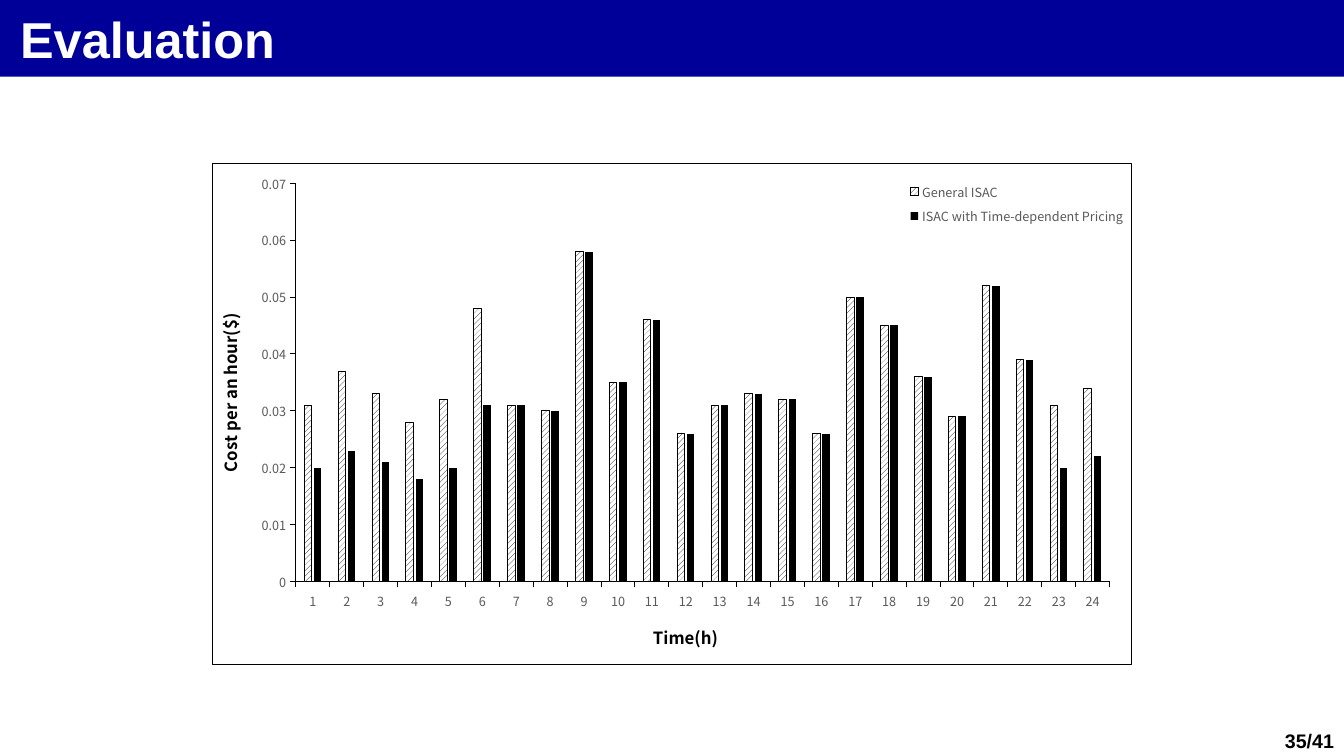
from dataclasses import dataclass

from lxml import etree
from pptx import Presentation
from pptx.chart import data as cd
from pptx.dml.color import RGBColor
from pptx.enum import chart as ch, dml, text
from pptx.oxml import parse_xml
from pptx.oxml.ns import nsdecls, qn
from pptx.util import Inches, Pt


@dataclass(frozen=True)
class Theme:
    navy: RGBColor = RGBColor(0x00, 0x00, 0x99)
    white: RGBColor = RGBColor(0xFF, 0xFF, 0xFF)
    black: RGBColor = RGBColor(0x00, 0x00, 0x00)
    gray: RGBColor = RGBColor(0x59, 0x59, 0x59)
    sans: str = "Arial"
    plot: str = "Noto Sans CJK KR"
    head: float = 36
    page: float = 14
    name: float = 12
    base: float = 10
    tick: float = 9
    line: float = 0.75


@dataclass(frozen=True)
class Series:
    name: str
    costs: tuple[float, ...]
    hatched: bool


@dataclass(frozen=True)
class Place:
    """Position inside the chart, as fractions of its size."""
    x: float
    y: float
    w: float = 0
    h: float = 0
    inner: bool = False


@dataclass(frozen=True)
class Label:
    """Axis title, turned by whole degrees."""
    name: str
    spot: Place
    turn: int


T = Theme()
HOURS = range(1, 25)
SERIES = (
    Series("General ISAC", (
        0.031, 0.037, 0.033, 0.028, 0.032, 0.048, 0.031, 0.03,
        0.058, 0.035, 0.046, 0.026, 0.031, 0.033, 0.032, 0.026,
        0.05, 0.045, 0.036, 0.029, 0.052, 0.039, 0.031, 0.034), True),
    Series("ISAC with Time-dependent Pricing", (
        0.02, 0.023, 0.021, 0.018, 0.02, 0.031, 0.031, 0.03,
        0.058, 0.035, 0.046, 0.026, 0.031, 0.033, 0.032, 0.026,
        0.05, 0.045, 0.036, 0.029, 0.052, 0.039, 0.02, 0.022), False),
)
LABELS = (
    Label("Time(h)", Place(0.476, 0.91), 0),
    Label("Cost per an hour($)", Place(0, 0.293), -90),
)


def style(font, size: float, color: RGBColor, face: str, bold: bool = False) -> None:
    font.size, font.name, font.bold = Pt(size), face, bold
    font.color.rgb = color


def rule(line) -> None:
    line.color.rgb = T.black
    line.width = Pt(T.line)


def place(node, spot: Place) -> None:
    """Give a chart part a manual layout."""
    for old in node.findall(qn("c:layout")):
        node.remove(old)
    layout = etree.Element(qn("c:layout"))
    manual = etree.SubElement(layout, qn("c:manualLayout"))
    parts = [("layoutTarget", "inner")] if spot.inner else []
    parts += [("xMode", "edge"), ("yMode", "edge"), ("x", spot.x), ("y", spot.y)]
    if spot.w:
        parts += [("w", spot.w), ("h", spot.h)]
    for tag, val in parts:
        etree.SubElement(manual, qn(f"c:{tag}")).set("val", str(val))
    before = [kid for kid in node if kid.tag in (qn("c:tx"), qn("c:legendPos"))]
    node.insert(len(before), layout)


def frame(chart) -> None:
    """Fill and outline the chart area."""
    area = parse_xml(
        f'<c:spPr {nsdecls("c", "a")}>'
        f'<a:solidFill><a:srgbClr val="{T.white}"/></a:solidFill>'
        f'<a:ln w="{Pt(T.line)}"><a:solidFill><a:srgbClr val="{T.black}"/></a:solidFill></a:ln>'
        '</c:spPr>')
    chart.element.find(qn("c:chart")).addnext(area)


def dress(axis, label: Label) -> None:
    """Style an axis and write its title."""
    axis.has_major_gridlines = False
    axis.major_tick_mark = ch.XL_TICK_MARK.OUTSIDE
    axis.minor_tick_mark = ch.XL_TICK_MARK.NONE
    rule(axis.format.line)
    style(axis.tick_labels.font, T.tick, T.gray, T.plot)
    frm = axis.axis_title.text_frame
    frm.text = label.name
    style(frm.paragraphs[0].runs[0].font, T.name, T.black, T.plot, True)


def turn(node, label: Label) -> None:
    """Rotate and place an axis title."""
    body = next(node.iter(qn("a:bodyPr")))
    body.set("rot", str(label.turn * 60000))
    body.set("vert", "horz")
    place(node, label.spot)


def draw(slide) -> None:
    """Add the cost chart."""
    data = cd.CategoryChartData()
    data.categories = [str(hour) for hour in HOURS]
    for item in SERIES:
        data.add_series(item.name, item.costs)
    chart = slide.shapes.add_chart(
        ch.XL_CHART_TYPE.COLUMN_CLUSTERED, Inches(2.1), Inches(1.62),
        Inches(9.13), Inches(4.98), data).chart
    style(chart.font, T.base, T.black, T.plot)
    chart.has_title = False
    frame(chart)
    place(next(chart.element.iter(qn("c:plotArea"))), Place(0.091, 0.039, 0.885, 0.795, True))

    plot = chart.plots[0]
    plot.gap_width, plot.overlap = 219, -27
    plot.vary_by_categories = False
    for item, bars in zip(SERIES, plot.series):
        fill = bars.format.fill
        if item.hatched:
            fill.patterned()
            fill.pattern = dml.MSO_PATTERN.WIDE_UPWARD_DIAGONAL
            fill.fore_color.rgb, fill.back_color.rgb = T.black, T.white
            rule(bars.format.line)
        else:
            fill.solid()
            fill.fore_color.rgb = T.black

    cost = chart.value_axis
    for axis, label in zip((chart.category_axis, cost), LABELS):
        dress(axis, label)
    for node, label in zip(chart.element.iter(qn("c:title")), LABELS):
        turn(node, label)
    cost.minimum_scale, cost.maximum_scale, cost.major_unit = 0, 0.07, 0.01
    cost.tick_labels.number_format = "General"
    cost.tick_labels.number_format_is_linked = False

    chart.has_legend = True
    key = chart.legend
    key.position = ch.XL_LEGEND_POSITION.RIGHT
    key.include_in_layout = False
    style(key.font, T.tick, T.gray, T.plot)
    place(next(chart.element.iter(qn("c:legend"))), Place(0.755, 0.025, 0.24, 0.11))


def write(box, words: str, size: float, color: RGBColor, align) -> None:
    frm = box.text_frame
    frm.text = words
    frm.word_wrap = True
    frm.auto_size = text.MSO_AUTO_SIZE.NONE
    frm.vertical_anchor = text.MSO_ANCHOR.MIDDLE
    line = frm.paragraphs[0]
    line.alignment = align
    style(line.runs[0].font, size, color, T.sans, True)


def main() -> None:
    deck = Presentation()
    deck.slide_width, deck.slide_height = Inches(13.33), Inches(7.5)
    slide = deck.slides.add_slide(deck.slide_layouts[5])

    page = slide.shapes.add_textbox(Inches(12.65), Inches(7.19), Inches(0.68), Inches(0.31))
    write(page, "35/41", T.page, T.black, text.PP_ALIGN.RIGHT)
    page.text_frame.margin_left = 0

    head = slide.shapes.title
    head.left, head.top, head.width, head.height = 0, 0, Inches(13.33), Inches(0.76)
    head.fill.solid()
    head.fill.fore_color.rgb = T.navy
    write(head, "Evaluation", T.head, T.white, text.PP_ALIGN.LEFT)
    head.text_frame.margin_left = head.text_frame.margin_right = Inches(0.2)

    draw(slide)
    deck.save("out.pptx")


if __name__ == "__main__":
    main()
